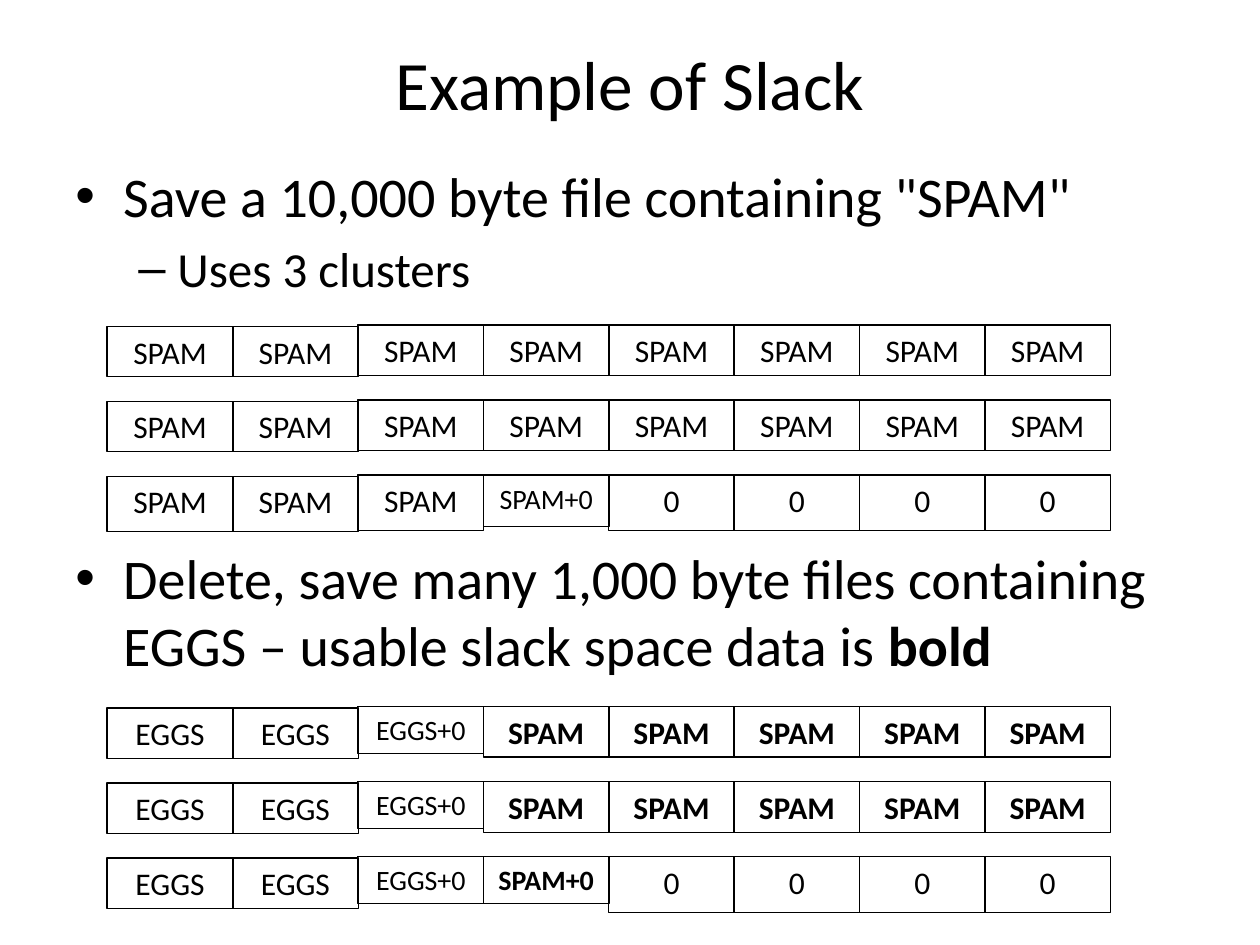
from pptx import Presentation
from pptx.dml.color import RGBColor
from pptx.enum.shapes import MSO_SHAPE
from pptx.enum.text import MSO_ANCHOR, PP_ALIGN
from pptx.oxml.ns import qn
from pptx.util import Inches, Pt
from lxml import etree

FONT = "Calibri"
BLACK = "000000"
CELL_WIDTH = 1
COLUMN_STEP = 0.995
ROW_STEP = 0.595

# Each row lists runs of equal sectors: label, count, height, bold
SPAM_CLUSTERS = [
    [("SPAM", 8, 0.4, False)],
    [("SPAM", 8, 0.4, False)],
    [("SPAM", 3, 0.44, False), ("SPAM+0", 1, 0.41, False), ("0", 4, 0.44, False)],
]
EGGS_START = [("EGGS", 2, 0.4, False), ("EGGS+0", 1, 0.37, False)]
EGGS_CLUSTERS = [
    EGGS_START + [("SPAM", 5, 0.4, True)],
    EGGS_START + [("SPAM", 5, 0.4, True)],
    EGGS_START + [("SPAM+0", 1, 0.37, True), ("0", 4, 0.44, False)],
]


def color(hex_code):
    return RGBColor.from_string(hex_code)


def style_runs(paragraph, size, bold=False):
    for run in paragraph.runs:
        run.font.name = FONT
        run.font.size = Pt(size)
        run.font.bold = bold
        run.font.color.rgb = color(BLACK)


def set_bullet(paragraph, symbol, margin, hanging):
    properties = paragraph._p.get_or_add_pPr()
    properties.set("marL", str(Inches(margin)))
    properties.set("indent", str(-Inches(hanging)))
    etree.SubElement(properties, qn("a:buFont")).set("typeface", "Arial")
    etree.SubElement(properties, qn("a:buChar")).set("char", symbol)


def add_text_box(slide, left, top, width, height):
    frame = slide.shapes.add_textbox(
        Inches(left), Inches(top), Inches(width), Inches(height)).text_frame
    frame.word_wrap = True
    return frame


def add_title(slide, left, top, width, height):
    frame = add_text_box(slide, left, top, width, height)
    frame.vertical_anchor = MSO_ANCHOR.MIDDLE
    frame.text = "Example of Slack"
    frame.paragraphs[0].alignment = PP_ALIGN.CENTER
    style_runs(frame.paragraphs[0], 39.6)


def add_body(slide, left, top, width, height):
    frame = add_text_box(slide, left, top, width, height)
    save, clusters, delete = (
        frame.paragraphs[0], frame.add_paragraph(), frame.add_paragraph())

    save.text = 'Save a 10,000 byte file containing "SPAM"'
    clusters.text = "Uses 3 clusters"
    clusters.level = 1
    delete.text = ("Delete, save many 1,000 byte files containing EGGS"
                   " – usable slack space data is ")
    delete.add_run().text = "bold"

    # The last gap leaves room for the first cluster diagram
    for paragraph, size, gap in ((save, 32, 6.4), (clusters, 28, 5.6), (delete, 32, 141)):
        paragraph.space_before = Pt(gap)
        style_runs(paragraph, size)
    delete.runs[-1].font.bold = True

    set_bullet(save, "•", 0.38, 0.38)
    set_bullet(clusters, "–", 0.81, 0.31)
    set_bullet(delete, "•", 0.38, 0.38)


def add_sector(group, left, top, height, label, bold):
    sector = group.shapes.add_shape(
        MSO_SHAPE.RECTANGLE, Inches(left), Inches(top), Inches(CELL_WIDTH), Inches(height))
    sector.shadow.inherit = False
    sector.fill.background()
    sector.line.color.rgb = color(BLACK)
    sector.line.width = Pt(0.75)
    frame = sector.text_frame
    frame.word_wrap = True
    frame.vertical_anchor = MSO_ANCHOR.TOP
    frame.text = label
    frame.paragraphs[0].alignment = PP_ALIGN.CENTER
    style_runs(frame.paragraphs[0], 16 if label.endswith("+0") else 18, bold)


def add_clusters(slide, left, top, rows):
    group = slide.shapes.add_group_shape()
    for row_index, row in enumerate(rows):
        column = 0
        for label, count, height, bold in row:
            for _ in range(count):
                # Sectors after the second sit slightly higher
                lift = 0.01 if column >= 2 else 0
                add_sector(group, left + column * COLUMN_STEP,
                           top + row_index * ROW_STEP - lift, height, label, bold)
                column += 1


def main():
    presentation = Presentation()
    presentation.slide_width = Inches(10)
    presentation.slide_height = Inches(7.5)
    slide = presentation.slides.add_slide(presentation.slide_layouts[6])

    add_title(slide, 0.5, 0.3, 9, 0.72)
    add_body(slide, 0.5, 1.23, 9, 5.47)
    add_clusters(slide, 0.85, 2.59, SPAM_CLUSTERS)
    add_clusters(slide, 0.85, 5.62, EGGS_CLUSTERS)

    presentation.save("out.pptx")


if __name__ == "__main__":
    main()
